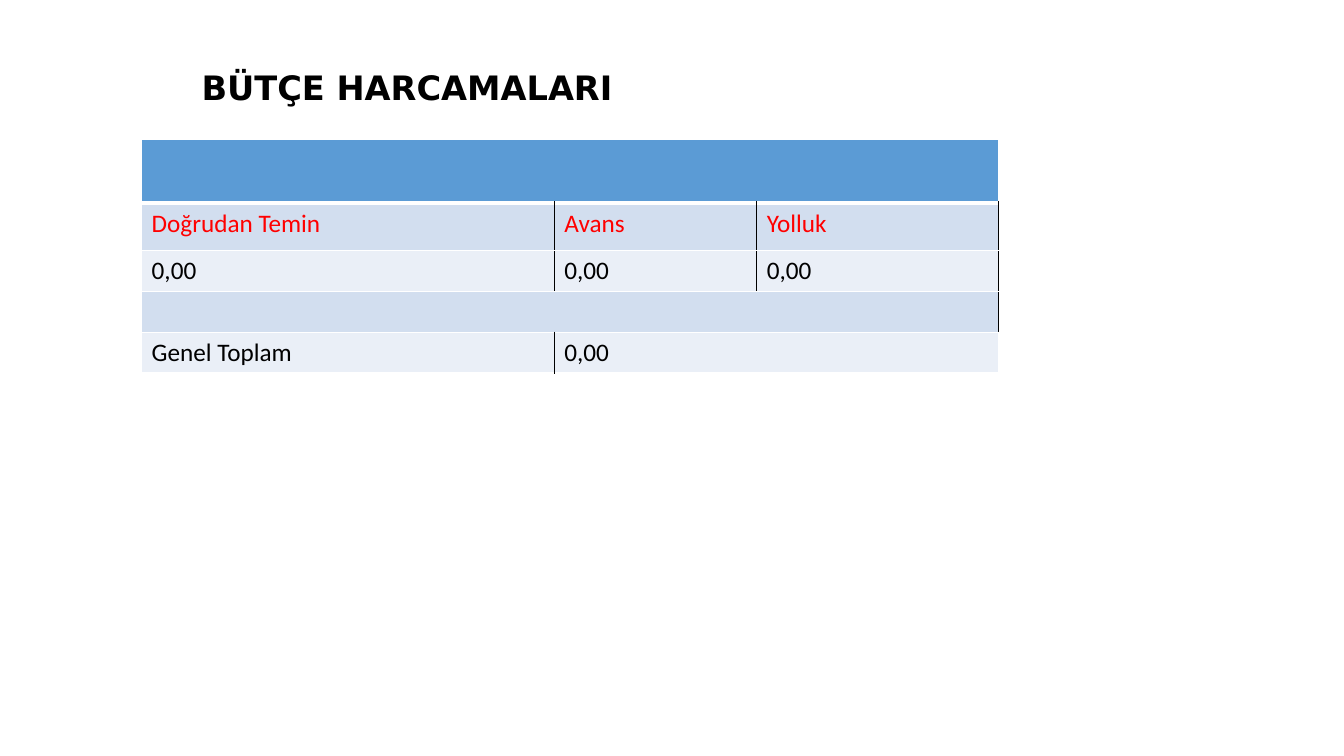
from dataclasses import dataclass

from lxml import etree
from pptx import Presentation
from pptx.dml.color import RGBColor
from pptx.enum.text import MSO_ANCHOR
from pptx.oxml.ns import qn
from pptx.slide import Slide
from pptx.table import Table, _Cell
from pptx.text.text import _Paragraph
from pptx.util import Cm, Pt

MIDDLE = MSO_ANCHOR.MIDDLE

BLACK, WHITE, RED = "000000", "FFFFFF", "FF0000"
HEADER_BLUE, BAND_DARK, BAND_LIGHT = "5B9BD5", "D2DEEF", "EAEFF7"

COLUMN_WIDTHS = (10.4, 5.1, 6.1)
THICK, THIN = 3, 1


@dataclass(frozen=True)
class BudgetRow:
    height: float
    fill: str
    texts: tuple[str, ...]
    spans: tuple[int, ...]
    text_color: str = BLACK
    right_edge: str = BLACK
    top_width: float = THIN
    bottom_width: float = THIN


BUDGET_ROWS = (
    BudgetRow(1.6, HEADER_BLUE, ("",), (3,), right_edge=WHITE, bottom_width=THICK),
    BudgetRow(1.19, BAND_DARK, ("Doğrudan Temin", "Avans", "Yolluk"), (1, 1, 1),
              text_color=RED, top_width=THICK),
    BudgetRow(1.03, BAND_LIGHT, ("0,00", "0,00", "0,00"), (1, 1, 1)),
    BudgetRow(1.03, BAND_DARK, ("",), (3,)),
    BudgetRow(1.03, BAND_LIGHT, ("Genel Toplam", "0,00"), (1, 2), right_edge=WHITE),
)


def rgb(color: str) -> RGBColor:
    return RGBColor.from_string(color)


def add_run(paragraph: _Paragraph, text: str, font_name: str, size: float,
            color: str, bold: bool = False) -> None:
    run = paragraph.add_run()
    run.text = text
    run.font.name = font_name
    run.font.size = Pt(size)
    run.font.bold = bold
    run.font.color.rgb = rgb(color)


def add_border(cell: _Cell, side: str, color: str, width: float) -> None:
    """Append one border; sides must come in the order L, R, T, B, before the fill."""
    properties = cell._tc.get_or_add_tcPr()
    line = etree.SubElement(properties, qn(f"a:ln{side}"), w=str(Pt(width)))
    solid_fill = etree.SubElement(line, qn("a:solidFill"))
    etree.SubElement(solid_fill, qn("a:srgbClr"), val=color)


def style_cell(cell: _Cell, row: BudgetRow, left: str, right: str) -> None:
    add_border(cell, "L", left, THIN)
    add_border(cell, "R", right, THIN)
    add_border(cell, "T", WHITE, row.top_width)
    add_border(cell, "B", WHITE, row.bottom_width)
    cell.fill.solid()
    cell.fill.fore_color.rgb = rgb(row.fill)


def fill_row(table: Table, row_index: int, row: BudgetRow) -> None:
    table.rows[row_index].height = Cm(row.height)
    start = 0
    for text, span in zip(row.texts, row.spans):
        end = start + span
        left = BLACK if start else WHITE
        right = row.right_edge if end == len(COLUMN_WIDTHS) else BLACK
        for column in range(start, end):
            style_cell(table.cell(row_index, column), row, left, right)
        cell = table.cell(row_index, start)
        if span > 1:
            cell.merge(table.cell(row_index, end - 1))
        if text:
            add_run(cell.text_frame.paragraphs[0], text, "Calibri", 18, row.text_color)
        start = end


def add_title(slide: Slide) -> None:
    title = slide.shapes.add_textbox(Cm(4.83), Cm(1.02), Cm(26.72), Cm(2.49))
    frame = title.text_frame
    frame.word_wrap = True
    frame.vertical_anchor = MIDDLE
    paragraph = frame.paragraphs[0]
    paragraph.line_spacing = 0.9
    add_run(paragraph, "BÜTÇE HARCAMALARI", "DejaVu Sans", 24, BLACK, bold=True)


def add_budget_table(slide: Slide) -> None:
    total_height = sum(row.height for row in BUDGET_ROWS)
    table = slide.shapes.add_table(
        len(BUDGET_ROWS), len(COLUMN_WIDTHS), Cm(3.57), Cm(3.52),
        Cm(sum(COLUMN_WIDTHS)), Cm(total_height)).table
    table.first_row = False
    table.horz_banding = False
    for column, width in zip(table.columns, COLUMN_WIDTHS):
        column.width = Cm(width)
    for row_index, row in enumerate(BUDGET_ROWS):
        fill_row(table, row_index, row)


def main() -> None:
    presentation = Presentation()
    presentation.slide_width = Cm(33.87)
    presentation.slide_height = Cm(19.05)
    slide = presentation.slides.add_slide(presentation.slide_layouts[6])
    add_title(slide)
    add_budget_table(slide)
    presentation.save("out.pptx")


if __name__ == "__main__":
    main()
